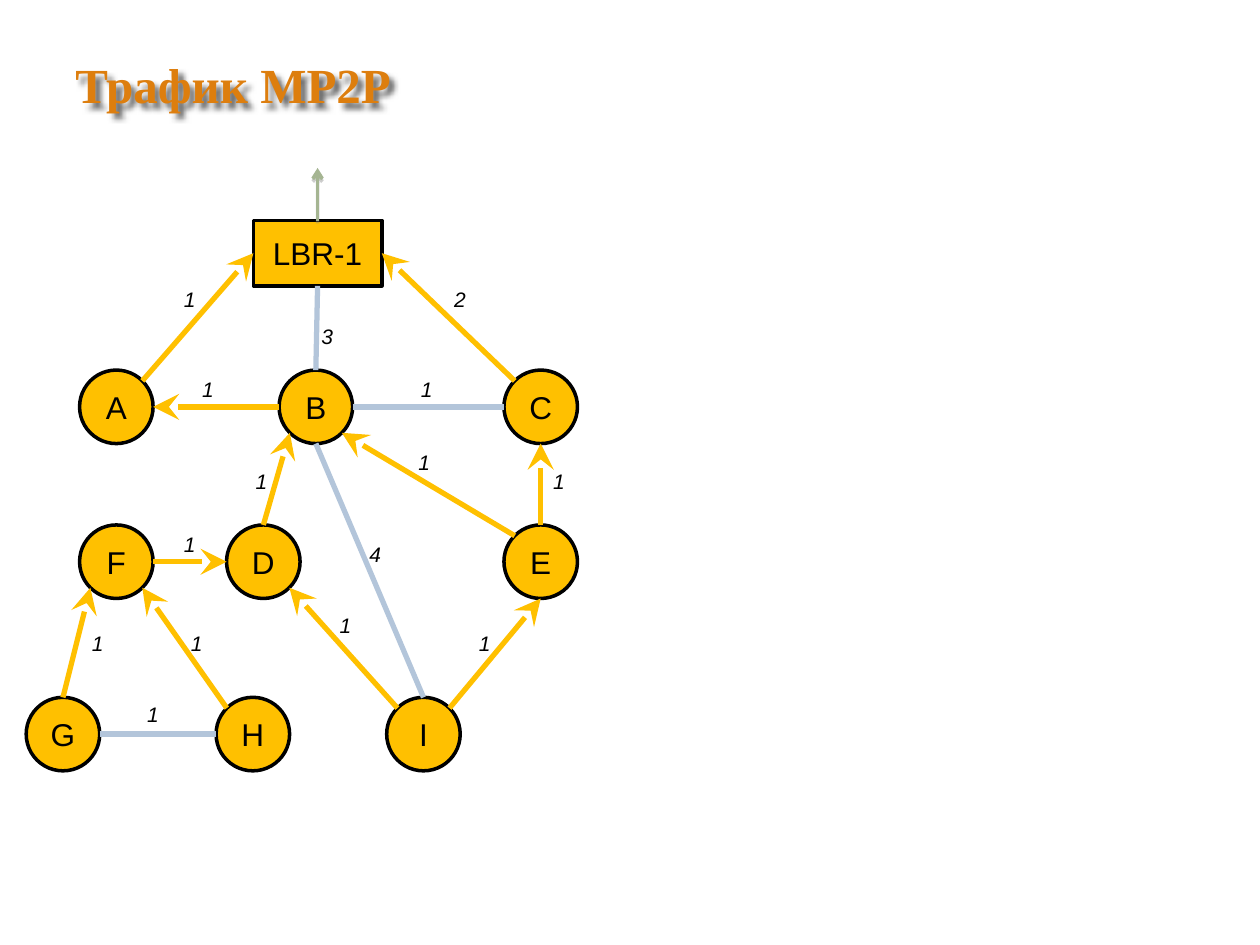
from dataclasses import dataclass
from math import cos, radians, sin

from lxml import etree
from pptx import Presentation
from pptx.dml.color import RGBColor
from pptx.enum import shapes as s, text as t
from pptx.oxml.ns import qn
from pptx.util import Pt


@dataclass(frozen=True)
class Theme:
    """Colours, fonts and sizes of the slide."""
    gold: str = "FFC000"
    blue: str = "B3C5DA"
    green: str = "A5B592"
    ink: str = "000000"
    title: str = "DD7E0E"
    shade: str = "808080"
    sans: str = "Arial"
    serif: str = "Times New Roman"
    head: float = 28
    node: float = 18
    mark: float = 12
    edge: float = 3
    rim: float = 2


TH = Theme()
DIAM = 42
ROOT = "LBR-1"
ROOT_BOX = (129.8, 30, 73.4, 37.4)
NODES = {
    "A": (51.5, 136.5), "B": (165.5, 136.5), "C": (294, 136.5),
    "F": (51.5, 225), "D": (135.5, 225), "E": (294, 225),
    "G": (21, 323.5), "H": (129.5, 323.5), "I": (227, 323.5),
}
ANGLES = {"e": 0, "se": 45, "s": 90, "sw": 135, "w": 180, "nw": 225, "n": 270, "ne": 315}
SITES = {"n": 0, "w": 1, "s": 2, "e": 3}
LINKS = [
    ("A", "ne", ROOT, "w", True, "1", 83, 64),
    ("B", "n", ROOT, "s", False, "3", 161.5, 85.5),
    ("C", "nw", ROOT, "e", True, "2", 237.5, 64),
    ("B", "e", "C", "w", False, "1", 218.5, 115.5),
    ("B", "w", "A", "e", True, "1", 93.5, 115.5),
    ("E", "nw", "B", "se", True, "1", 217, 157.5),
    ("E", "n", "C", "s", True, "1", 294, 168),
    ("D", "n", "B", "sw", True, "1", 124, 168),
    ("I", "n", "B", "s", False, "4", 189, 210),
    ("F", "e", "D", "w", True, "1", 83, 204),
    ("G", "n", "F", "sw", True, "1", 30.5, 261),
    ("H", "nw", "F", "se", True, "1", 87, 261),
    ("I", "nw", "D", "se", True, "1", 172, 250.5),
    ("I", "ne", "E", "s", True, "1", 251.5, 261),
    ("G", "e", "H", "w", False, "1", 62, 301.5),
]


def rgb(code):
    """Turn a hex code into a colour."""
    return RGBColor.from_string(code)


def write(shape, words, face, size, tint, bold=False, slant=False):
    """Add one run to the first paragraph and return that paragraph."""
    para = shape.text_frame.paragraphs[0]
    run = para.add_run()
    run.text = words
    font = run.font
    font.name, font.size, font.bold, font.italic = face, Pt(size), bold, slant
    font.color.rgb = rgb(tint)
    return para


def shadow(shape, tint=None, alpha=0, blur=0, dist=0, turn=0):
    """Set an outer shadow, or clear it when no tint is given."""
    effect = etree.SubElement(shape._element.spPr, qn("a:effectLst"))
    if tint:
        outer = etree.SubElement(
            effect, qn("a:outerShdw"), blurRad=str(Pt(blur)),
            dist=str(Pt(dist)), dir=str(turn * 60000), rotWithShape="0")
        color = etree.SubElement(outer, qn("a:srgbClr"), val=tint)
        etree.SubElement(color, qn("a:alpha"), val=str(alpha * 1000))


def wire(slide, start, end, tint, width, tip=None, size="lg"):
    """Draw a straight connector with an optional arrowhead."""
    line = slide.shapes.add_connector(
        s.MSO_CONNECTOR.STRAIGHT, *[Pt(n) for n in (*start, *end)])
    line.line.color.rgb = rgb(tint)
    line.line.width = Pt(width)
    if tip:
        stroke = line._element.spPr.get_or_add_ln()
        etree.SubElement(stroke, qn("a:tailEnd"), type=tip, w=size, len=size)
    return line


def node(slide, kind, box, name):
    """Draw one named network node."""
    shape = slide.shapes.add_shape(kind, *[Pt(n) for n in box])
    shape.shadow.inherit = False
    shape.fill.solid()
    shape.fill.fore_color.rgb = rgb(TH.gold)
    shape.line.color.rgb = rgb(TH.ink)
    shape.line.width = Pt(TH.rim)
    shape.text_frame.vertical_anchor = t.MSO_ANCHOR.MIDDLE
    write(shape, name, TH.sans, TH.node, TH.ink).alignment = t.PP_ALIGN.CENTER
    return shape


def label(slide, left, top, words):
    """Write the weight of a link."""
    box = slide.shapes.add_textbox(Pt(left), Pt(top), Pt(21.6), Pt(21.6))
    box.text_frame.word_wrap = False
    write(box, words, TH.sans, TH.mark, TH.ink, slant=True)


def title(slide, box, words):
    """Write the slide title with its soft shadow."""
    area = slide.shapes.add_textbox(*[Pt(n) for n in box])
    area.text_frame.word_wrap = True
    area.text_frame.vertical_anchor = t.MSO_ANCHOR.MIDDLE
    write(area, words, TH.serif, TH.head, TH.title, bold=True)
    shadow(area, TH.ink, 60, 3, 3.5, 45)


def graph(slide, box):
    """Draw the nodes, weighted links and uplink of the network."""
    left, top = box

    def port(name, side):
        """Find the point on the rim of a node."""
        if name == ROOT:
            x, y, wide, high = ROOT_BOX
            mid, reach = (x + wide / 2, y + high / 2), (wide / 2, high / 2)
        else:
            mid, reach = NODES[name], (DIAM / 2, DIAM / 2)
        turn = radians(ANGLES[side])
        return left + mid[0] + reach[0] * cos(turn), top + mid[1] + reach[1] * sin(turn)

    for name, (x, y) in NODES.items():
        spot = (left + x - DIAM / 2, top + y - DIAM / 2, DIAM, DIAM)
        node(slide, s.MSO_SHAPE.OVAL, spot, name)
    x, y, wide, high = ROOT_BOX
    root = node(slide, s.MSO_SHAPE.RECTANGLE, (left + x, top + y, wide, high), ROOT)

    for child, out, goal, side, active, weight, x, y in LINKS:
        line = wire(slide, port(child, out), port(goal, side),
                    TH.gold if active else TH.blue, TH.edge,
                    "stealth" if active else None)
        shadow(line)
        if goal == ROOT:
            line.end_connect(root, SITES[side])
        label(slide, left + x, top + y, weight)

    start = port(ROOT, "n")
    uplink = wire(slide, start, (start[0], top), TH.green, TH.rim, "arrow", "med")
    uplink.begin_connect(root, SITES["n"])
    shadow(uplink, TH.shade, 38, 0, 1.6, 90)


def main():
    """Build and save the slide."""
    deck = Presentation()
    deck.slide_width, deck.slide_height = Pt(720), Pt(540)
    slide = deck.slides.add_slide(deck.slide_layouts[6])
    title(slide, (36, 13, 666, 70), "Трафик MP2P")
    graph(slide, (15, 96))
    deck.save("out.pptx")


if __name__ == "__main__":
    main()
